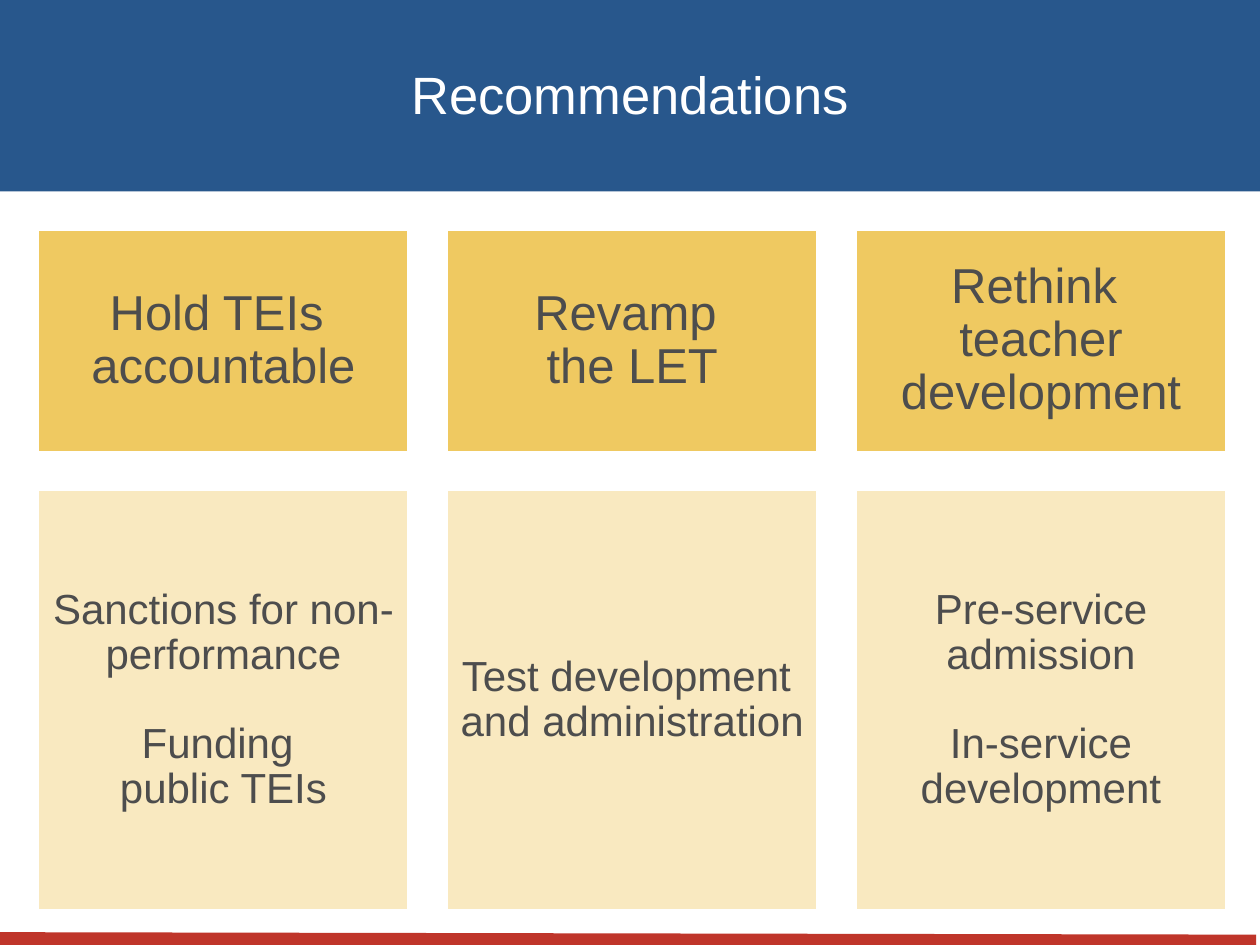
import pptx
import pptx.util
import pptx.dml.color
import pptx.enum.shapes
import pptx.enum.text
import pptx.oxml.ns
from lxml import etree
from pptx.util import Cm, Pt

COLORS = {
    "banner": "28578C",
    "head": "EFC961",
    "detail": "F9E9C0",
    "text": "4D4D4D",
    "white": "FFFFFF",
    "rule": "BF352A",
}

# Each column: heading lines, then groups of detail lines
COLUMNS = [
    (["Hold TEIs ", "accountable"],
     [["Sanctions for non-performance"], ["Funding ", "public TEIs"]]),
    (["Revamp ", "the LET"],
     [["Test development ", "and administration"]]),
    (["Rethink ", "teacher development"],
     [["Pre-service admission"], ["In-service", "development"]]),
]


def rgb(name):
    return pptx.dml.color.RGBColor.from_string(COLORS[name])


def fill_solid(sp, color):
    sp.fill.solid()
    sp.fill.fore_color.rgb = rgb(color)


def format_paragraph(p, size, color):
    p.alignment = pptx.enum.text.PP_ALIGN.CENTER
    for r in p.runs:
        r.font.name = "Arial"
        r.font.size = Pt(size)
        r.font.color.rgb = rgb(color)


def add_banner(s, x, y, w, h):
    sp = s.shapes.title
    sp.left, sp.top, sp.width, sp.height = x, y, w, h
    fill_solid(sp, "banner")
    tf = sp.text_frame
    tf.text = "Recommendations"
    tf.vertical_anchor = pptx.enum.text.MSO_ANCHOR.MIDDLE
    format_paragraph(tf.paragraphs[0], 30, "white")


def add_card(s, x, y, w, h, groups, color, size, inset):
    sp = s.shapes.add_shape(pptx.enum.shapes.MSO_SHAPE.RECTANGLE, x, y, w, h)
    sp.shadow.inherit = False
    fill_solid(sp, color)
    sp.line.color.rgb = rgb("white")
    sp.line.width = Pt(2)
    tf = sp.text_frame
    tf.word_wrap = True
    tf.vertical_anchor = pptx.enum.text.MSO_ANCHOR.MIDDLE
    tf.margin_left = tf.margin_right = inset
    tf.margin_top = tf.margin_bottom = inset
    tf.text = "\n".join(line for group in groups for line in group)
    for p in tf.paragraphs:
        p.line_spacing = 0.9
        format_paragraph(p, size, "text")
    # A one-line gap opens every group after the first
    start = 0
    for group in groups[:-1]:
        start += len(group)
        tf.paragraphs[start].space_before = Pt(25)


def add_card_grid(s, x, y, w, h):
    gap, head_h = Cm(0.75), Cm(4.5)
    card_w = (w - gap * (len(COLUMNS) - 1)) // len(COLUMNS)
    detail_y = y + head_h + gap
    for i, (heading, details) in enumerate(COLUMNS):
        left = x + i * (card_w + gap)
        add_card(s, left, y, card_w, head_h, [heading], "head", 28, Cm(0.3))
        add_card(s, left, detail_y, card_w, y + h - detail_y,
                 details, "detail", 24, Cm(0.25))


def add_footer_rule(s, x, y, w, h):
    line = s.shapes.add_connector(
        pptx.enum.shapes.MSO_CONNECTOR.STRAIGHT, x, y, x + w, y + h)
    line.line.color.rgb = rgb("rule")
    line.line.width = Pt(9)
    etree.SubElement(line._element.spPr, pptx.oxml.ns.qn("a:effectLst"))


def main():
    prs = pptx.Presentation()
    prs.slide_width, prs.slide_height = Cm(25.4), Cm(19.05)
    s = prs.slides.add_slide(prs.slide_layouts[5])
    add_banner(s, Cm(0), Cm(-0.08), Cm(25.4), Cm(3.94))
    add_card_grid(s, Cm(0.76), Cm(4.62), Cm(23.97), Cm(13.75))
    add_footer_rule(s, Cm(-0.1), Cm(18.95), Cm(25.42), Cm(0.05))
    prs.save("out.pptx")


if __name__ == "__main__":
    main()
